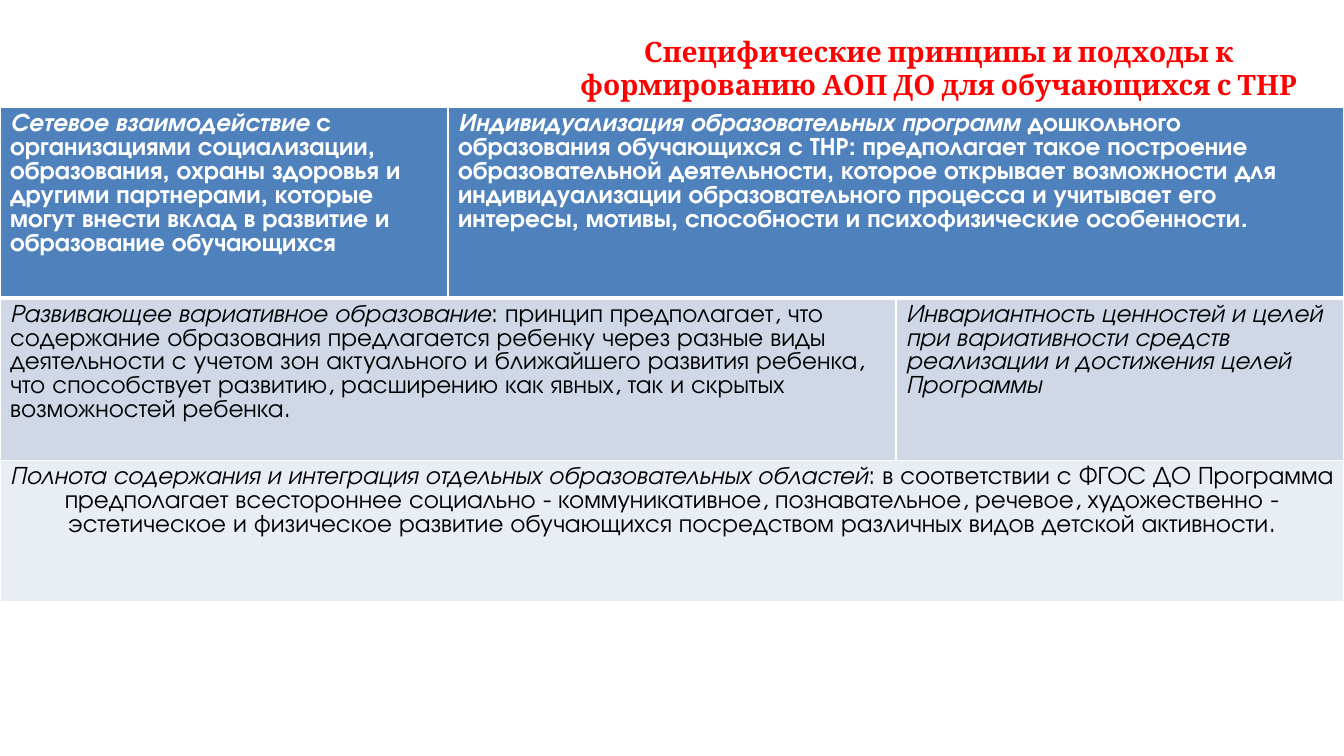
import pptx
import pptx.util
import pptx.dml.color
import pptx.enum.text
import pptx.oxml

RED = pptx.dml.color.RGBColor(0xFF, 0x00, 0x00)
WHITE = pptx.dml.color.RGBColor(0xFF, 0xFF, 0xFF)
BLACK = pptx.dml.color.RGBColor(0x00, 0x00, 0x00)
BLUE = pptx.dml.color.RGBColor(0x4F, 0x81, 0xBD)
PALE_BLUE = pptx.dml.color.RGBColor(0xD0, 0xD8, 0xE8)
PALE_GREY = pptx.dml.color.RGBColor(0xE9, 0xED, 0xF4)

CENTER = pptx.enum.text.PP_ALIGN.CENTER
LEFT = pptx.enum.text.PP_ALIGN.LEFT
NS = "http://schemas.openxmlformats.org/drawingml/2006/main"


class PrincipleSlide:
    """Style and current slide; lengths are shares of the slide's size."""

    title_font, title_size = "Cambria", pptx.util.Pt(20)
    body_font, body_size = "TeX Gyre Adventor", pptx.util.Pt(18)
    line_pitch = pptx.util.Pt(17)

    def __init__(self, prs):
        self.width, self.height = prs.slide_width, prs.slide_height
        self.s = prs.slides.add_slide(prs.slide_layouts[6])

    def box(self, x, y, w, h):
        return (round(x * self.width), round(y * self.height),
                round(w * self.width), round(h * self.height))

    def style(self, p, name, size, color, bold, align):
        p.alignment = align
        p.font.name, p.font.size = name, size
        p.font.bold = bold
        p.font.color.rgb = color

    def title(self, text, x, y, w, h):
        tf = self.s.shapes.add_textbox(*self.box(x, y, w, h)).text_frame
        tf.word_wrap = True
        tf.auto_size = pptx.enum.text.MSO_AUTO_SIZE.SHAPE_TO_FIT_TEXT
        p = tf.paragraphs[0]
        p.add_run().text = text
        self.style(p, self.title_font, self.title_size, RED, True, CENTER)

    def table(self, y, row_shares, columns):
        frame = self.s.shapes.add_table(
            len(row_shares), columns, *self.box(0, y, 1, sum(row_shares)))
        table = frame.table
        for row, share in zip(table.rows, row_shares):
            row.height = round(share * self.height)
        return table

    def borders(self, cell, top, bottom):
        tc_pr = cell._tc.get_or_add_tcPr()
        for side, points in (("L", 1), ("R", 1), ("T", top), ("B", bottom)):
            tc_pr.append(pptx.oxml.parse_xml(
                f'<a:ln{side} xmlns:a="{NS}" w="{pptx.util.Pt(points)}">'
                f'<a:solidFill><a:srgbClr val="{WHITE}"/></a:solidFill>'
                f'</a:ln{side}>'))

    def row(self, table, index, fill, color, bold, align, entries):
        # Borders and fill, with a thick line under the header
        for cell in table.rows[index].cells:
            self.borders(cell, 3 if index == 1 else 1, 3 if index == 0 else 1)
            cell.fill.solid()
            cell.fill.fore_color.rgb = fill
        # Principles, each over its span of columns
        column = 0
        for span, principle, detail in entries:
            cell = table.cell(index, column)
            if span > 1:
                cell.merge(table.cell(index, column + span - 1))
            p = cell.text_frame.paragraphs[0]
            for text, italic in ((principle, True), (detail, False)):
                if text:
                    r = p.add_run()
                    r.text, r.font.italic = text, italic
            p.line_spacing = self.line_pitch
            self.style(p, self.body_font, self.body_size, color, bold, align)
            column += span


def main():
    prs = pptx.Presentation()
    prs.slide_width = pptx.util.Inches(13.33)
    prs.slide_height = pptx.util.Inches(7.5)
    slide = PrincipleSlide(prs)

    # Title
    slide.title("Специфические принципы и подходы к формированию АОП ДО "
                "для обучающихся с ТНР", 5.28 / 13.33, 0.29 / 7.5,
                8.06 / 13.33, 0.77 / 7.5)

    # Table of principles
    table = slide.table(1.07 / 7.5, [1.89 / 7.5, 1.61 / 7.5, 1.4 / 7.5], 3)
    slide.row(table, 0, BLUE, WHITE, True, LEFT, [
        (1, "Сетевое взаимодействие",
         " с организациями социализации, образования, охраны здоровья и "
         "другими партнерами, которые могут внести вклад в развитие и "
         "образование обучающихся"),
        (2, "Индивидуализация образовательных программ",
         " дошкольного образования обучающихся с ТНР: предполагает такое "
         "построение образовательной деятельности, которое открывает "
         "возможности для индивидуализации образовательного процесса и "
         "учитывает его интересы, мотивы, способности и психофизические "
         "особенности."),
    ])
    slide.row(table, 1, PALE_BLUE, BLACK, False, LEFT, [
        (2, "Развивающее вариативное образование",
         ": принцип предполагает, что содержание образования предлагается "
         "ребенку через разные виды деятельности с учетом зон актуального и "
         "ближайшего развития ребенка, что способствует развитию, расширению "
         "как явных, так и скрытых возможностей ребенка."),
        (1, "Инвариантность ценностей и целей при вариативности средств "
         "реализации и достижения целей Программы", ""),
    ])
    slide.row(table, 2, PALE_GREY, BLACK, False, CENTER, [
        (3, "Полнота содержания и интеграция отдельных образовательных "
         "областей",
         ": в соответствии с ФГОС ДО Программа предполагает всестороннее "
         "социально - коммуникативное, познавательное, речевое, "
         "художественно - эстетическое и физическое развитие обучающихся "
         "посредством различных видов детской активности."),
    ])

    prs.save("out.pptx")


if __name__ == "__main__":
    main()
